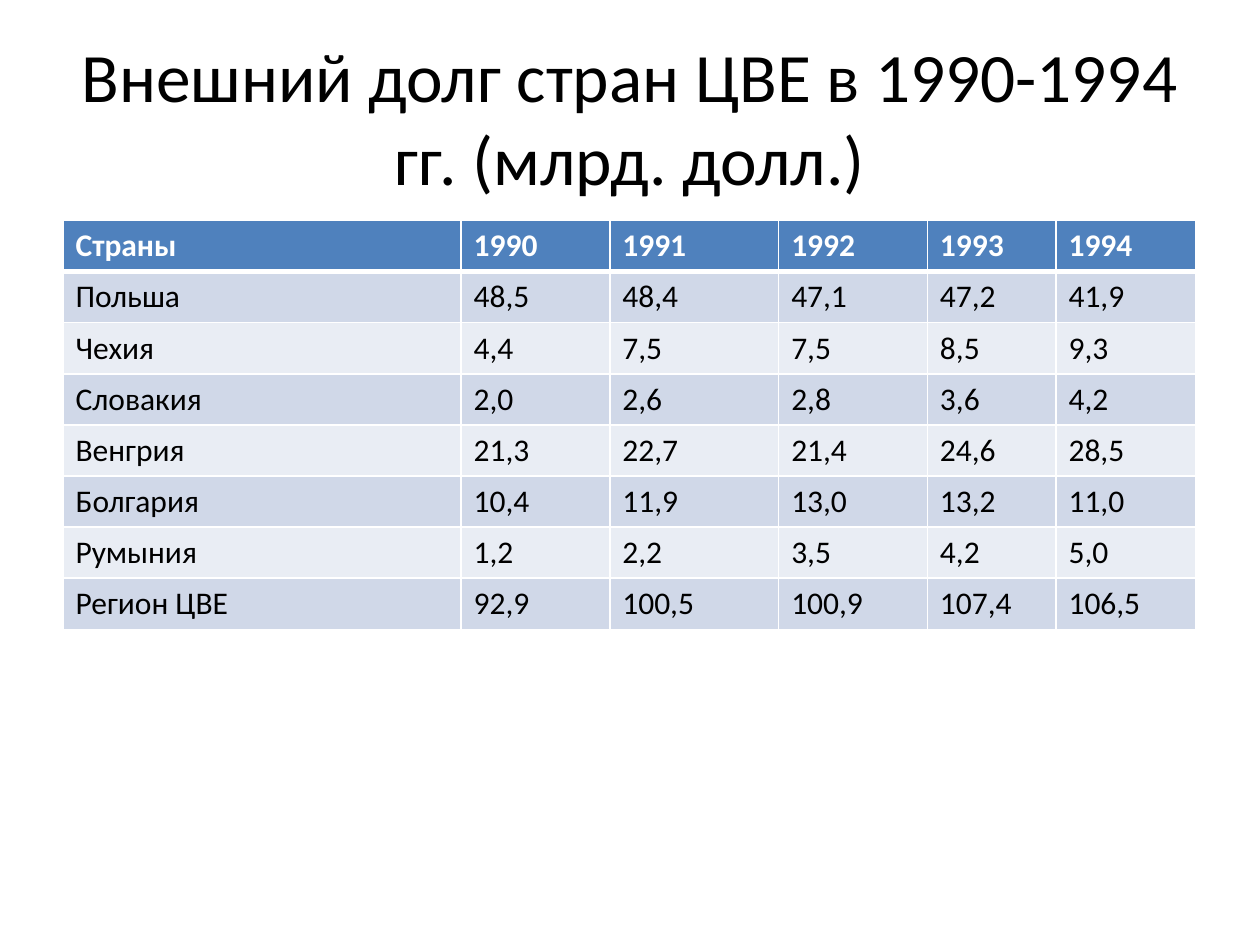
from dataclasses import dataclass

from lxml.etree import SubElement
from pptx import Presentation
from pptx.dml.color import RGBColor
from pptx.enum.text import MSO_ANCHOR, MSO_AUTO_SIZE, PP_ALIGN
from pptx.oxml.ns import qn
from pptx.util import Pt


@dataclass(frozen=True)
class Theme:
    font: str = "Calibri"
    title_size: float = 39.6
    table_size: float = 18
    text: str = "000000"
    header_text: str = "FFFFFF"
    header_fill: str = "4F81BD"
    bands: tuple = ("D0D8E8", "E9EDF4")
    border: str = "FFFFFF"
    thin: float = 1
    thick: float = 3


THEME = Theme()
TITLE = "Внешний долг стран ЦВЕ в 1990-1994 гг. (млрд. долл.)"
DEBT_ROWS = [
    ("Страны", "1990", "1991", "1992", "1993", "1994"),
    ("Польша", "48,5", "48,4", "47,1", "47,2", "41,9"),
    ("Чехия", "4,4", "7,5", "7,5", "8,5", "9,3"),
    ("Словакия", "2,0", "2,6", "2,8", "3,6", "4,2"),
    ("Венгрия", "21,3", "22,7", "21,4", "24,6", "28,5"),
    ("Болгария", "10,4", "11,9", "13,0", "13,2", "11,0"),
    ("Румыния", "1,2", "2,2", "3,5", "4,2", "5,0"),
    ("Регион ЦВЕ", "92,9", "100,5", "100,9", "107,4", "106,5"),
]
COLUMN_WIDTHS = (227.5, 85, 96.5, 85, 73.5, 80)
ROW_HEIGHT = 29.2
LEFT, WIDTH = 36, 648


def add_run(para, text, size, color, bold=False):
    span = para.add_run()
    span.text = text
    span.font.name = THEME.font
    span.font.size = Pt(size)
    span.font.bold = bold
    span.font.color.rgb = RGBColor.from_string(color)


def add_title(page, text):
    box = page.shapes.title
    box.left, box.top, box.width, box.height = Pt(LEFT), Pt(21.6), Pt(WIDTH), Pt(90)
    frame = box.text_frame
    frame.word_wrap = True
    frame.auto_size = MSO_AUTO_SIZE.NONE
    frame.vertical_anchor = MSO_ANCHOR.MIDDLE
    para = frame.paragraphs[0]
    para.alignment = PP_ALIGN.CENTER
    add_run(para, text, THEME.title_size, THEME.text)


def set_borders(cell, top, bottom):
    """Draw the four cell borders; call before the fill, which must follow them."""
    properties = cell._tc.get_or_add_tcPr()
    widths = {"a:lnL": THEME.thin, "a:lnR": THEME.thin, "a:lnT": top, "a:lnB": bottom}
    for side, width in widths.items():
        line = SubElement(properties, qn(side), w=str(Pt(width)))
        fill = SubElement(line, qn("a:solidFill"))
        SubElement(fill, qn("a:srgbClr"), val=THEME.border)


def fill_cell(cell, text, row_index):
    is_header = row_index == 0
    set_borders(
        cell,
        top=THEME.thick if row_index == 1 else THEME.thin,
        bottom=THEME.thick if is_header else THEME.thin,
    )
    background = THEME.header_fill if is_header else THEME.bands[(row_index - 1) % 2]
    cell.fill.solid()
    cell.fill.fore_color.rgb = RGBColor.from_string(background)
    color = THEME.header_text if is_header else THEME.text
    add_run(cell.text_frame.paragraphs[0], text, THEME.table_size, color, is_header)


def add_debt_table(page, rows):
    table = page.shapes.add_table(
        len(rows), len(COLUMN_WIDTHS),
        Pt(LEFT), Pt(126), Pt(WIDTH), Pt(ROW_HEIGHT * len(rows)),
    ).table
    for column, width in zip(table.columns, COLUMN_WIDTHS):
        column.width = Pt(width)
    for row_index, values in enumerate(rows):
        table.rows[row_index].height = Pt(ROW_HEIGHT)
        for column_index, value in enumerate(values):
            fill_cell(table.cell(row_index, column_index), value, row_index)


def main():
    deck = Presentation()
    deck.slide_width, deck.slide_height = Pt(720), Pt(540)
    page = deck.slides.add_slide(deck.slide_layouts.get_by_name("Title Only"))
    add_title(page, TITLE)
    add_debt_table(page, DEBT_ROWS)
    deck.save("out.pptx")


if __name__ == "__main__":
    main()
